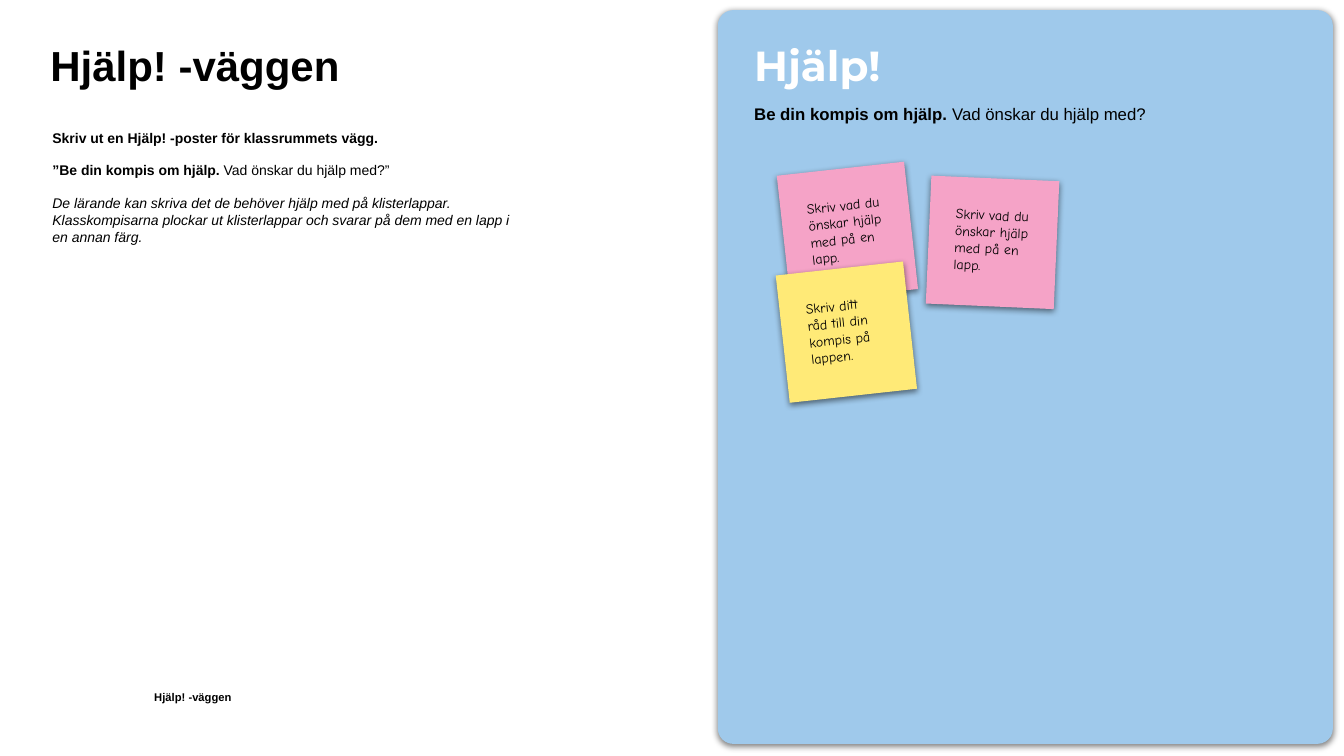
from lxml import etree
from pptx import Presentation
from pptx.dml.color import RGBColor
from pptx.enum.shapes import MSO_SHAPE
from pptx.enum.text import MSO_ANCHOR
from pptx.util import Inches, Pt

RECT, ROUND = MSO_SHAPE.RECTANGLE, MSO_SHAPE.ROUNDED_RECTANGLE
TOP = MSO_ANCHOR.TOP

THEME = {
    "black": "000000", "white": "FFFFFF", "blue": "9FC9EB",
    "pink": "F5A3C7", "yellow": "FFEA77",
    "sans": "Arial", "head": "Montserrat", "hand": "Comic Neue",
    "title": 30, "lead": 12, "body": 10, "foot": 8,
}

# A paragraph is a list of (text, style) runs; style holds b and/or i.
TITLE = "Hjälp! -väggen"
LEAD = [("Be din kompis om hjälp. ", "b"), ("Vad önskar du hjälp med?", "")]
BODY = [
    [("Skriv ut en Hjälp! -poster för klassrummets vägg.", "b")],
    [("”Be din kompis om hjälp. ", "b"), ("Vad önskar du hjälp med?”", "")],
    [("De lärande kan skriva det de behöver hjälp med på klisterlappar. "
      "Klasskompisarna plockar ut klisterlappar och svarar på dem med en "
      "lapp i en annan färg.", "i")],
]
ASK = "Skriv vad du önskar hjälp med på en lapp."
TIP = "Skriv ditt råd till din kompis på lappen."
NOTES = [  # left, top, turn, colour, text
    (9.21, 1.77, 2.5, "pink", ASK),
    (7.77, 1.67, -6.3, "pink", ASK),
    (7.76, 2.66, -6.3, "yellow", TIP),
]
SIDE, PAD_X, PAD_Y = 1.27, 0.16, 0.18

SHADOW = (
    '<a:effectLst xmlns:a="http://schemas.openxmlformats.org/drawingml/2006/main">'
    '<a:outerShdw blurRad="57150" dist="19050" dir="5400000" algn="bl" '
    'rotWithShape="0"><a:srgbClr val="000000"><a:alpha val="50000"/>'
    '</a:srgbClr></a:outerShdw></a:effectLst>'
)


def tone(name):
    return RGBColor.from_string(THEME[name])


def add_card(slide, kind, box, fill, turn=0):
    """Add a borderless filled shape with a soft drop shadow."""
    card = slide.shapes.add_shape(kind, *map(Inches, box))
    card.fill.solid()
    card.fill.fore_color.rgb = tone(fill)
    card.line.fill.background()
    card.shadow.inherit = False
    props = card._element.spPr
    props.remove(props[-1])
    props.append(etree.fromstring(SHADOW))
    card.rotation = turn
    return card


def add_text(slide, box, paras, size="body", font="sans", color="black",
             inset=(0, 0, 0, 0), turn=0, lead=None, gap=0):
    shape = slide.shapes.add_textbox(*map(Inches, box))
    shape.rotation = turn
    frame = shape.text_frame
    frame.word_wrap = True
    frame.vertical_anchor = TOP
    (frame.margin_left, frame.margin_top,
     frame.margin_right, frame.margin_bottom) = map(Inches, inset)
    for n, runs in enumerate(paras):
        para = frame.add_paragraph() if n else frame.paragraphs[0]
        if lead:
            para.line_spacing = lead
        if n:
            para.space_before = Pt(gap)
        for text, style in runs:
            run = para.add_run()
            run.text = text
            run.font.name = THEME[font]
            run.font.size = Pt(THEME[size])
            run.font.color.rgb = tone(color)
            run.font.bold = "b" in style
            run.font.italic = "i" in style


def main():
    deck = Presentation()
    deck.slide_width, deck.slide_height = Inches(13.33), Inches(7.5)
    slide = deck.slides.add_slide(deck.slide_layouts[6])

    add_text(slide, (0.5, 0.45, 6.4, 0.36), [[(TITLE, "b")]],
             size="title", lead=0.9)
    add_text(slide, (0.52, 1.28, 4.53, 4.99), BODY, gap=11.5)
    add_text(slide, (1.51, 6.86, 4.1, 0.22), [[(TITLE, "b")]],
             size="foot", lead=0.9, inset=(0.02, 0, 0, 0))

    panel = add_card(slide, ROUND, (7.12, 0.1, 6.1, 7.28), "blue")
    panel.adjustments[0] = 0.025
    add_text(slide, (7.48, 0.45, 3.28, 0.44), [[("Hjälp!", "b")]],
             size="title", font="head", color="white", lead=0.9)
    add_text(slide, (7.48, 1.05, 4.71, 0.67), [LEAD], size="lead", lead=0.9)

    for left, top, turn, fill, text in NOTES:
        add_card(slide, RECT, (left, top, SIDE, SIDE), fill, turn)
        area = (left + PAD_X, top + PAD_Y, SIDE - 2 * PAD_X, SIDE - 2 * PAD_Y)
        add_text(slide, area, [[(text, "")]], font="hand",
                 inset=(0.1,) * 4, turn=turn)

    deck.save("out.pptx")


if __name__ == "__main__":
    main()
